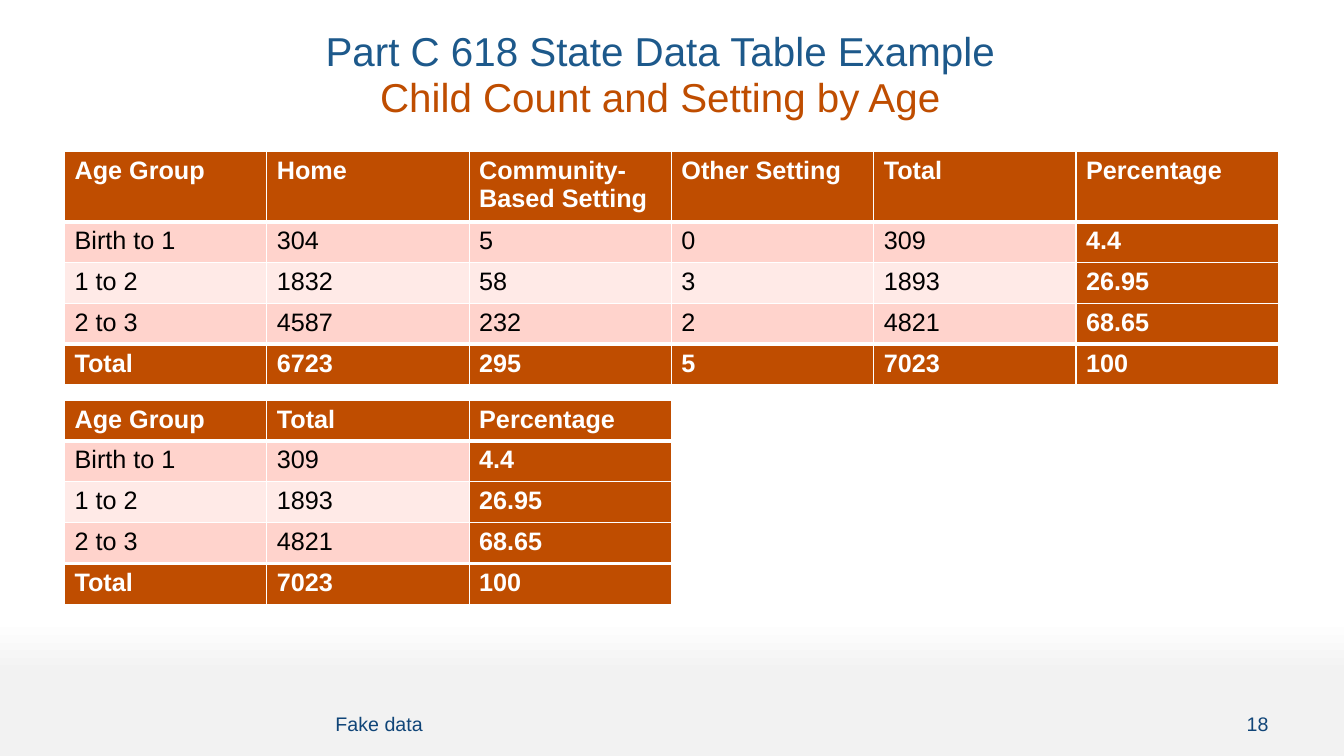
from lxml import etree
from pptx import Presentation
from pptx import util as u
from pptx.dml.color import RGBColor
from pptx.enum import text
from pptx.oxml import ns

ORANGE, BLUE, NAVY, WHITE = "BF4D00", "1D598B", "104578", "FFFFFF"
BANDS = ["FFD3CC", "FFEAE7"]


def rgb(value):
    return RGBColor.from_string(value)


class Deck:
    """Places elements on a grid of 6 columns and 30 rows."""
    font = "Arial"
    left, col, row = 0.64, 12.04 / 6, 0.25

    def __init__(self, prs):
        self.s = prs.slides.add_slide(prs.slide_layouts[6])

    def area(self, col, row, cols, rows):
        return (u.Inches(self.left + col * self.col), u.Inches(row * self.row),
                u.Inches(cols * self.col), u.Inches(rows * self.row))

    def background(self, stops):
        fill = self.s.background.fill
        fill.gradient()
        fill.gradient_angle = 270
        for stop, (position, color) in zip(fill.gradient_stops, stops):
            stop.position = position
            stop.color.rgb = rgb(color)

    def style(self, p, size, color, bold=False):
        for r in p.runs:
            r.font.name, r.font.size, r.font.bold = self.font, u.Pt(size), bold
            r.font.color.rgb = rgb(color)

    def text(self, area, lines, size, align="LEFT", anchor="MIDDLE", spacing=1.0):
        """Each line is (wording, colour, right indent in inches)."""
        tf = self.s.shapes.add_textbox(*self.area(*area)).text_frame
        tf.word_wrap = True
        tf.vertical_anchor = text.MSO_ANCHOR[anchor]
        for i, (wording, color, indent) in enumerate(lines):
            p = tf.add_paragraph() if i else tf.paragraphs[0]
            p.text = wording
            p.alignment = text.PP_ALIGN[align]
            p.line_spacing = spacing
            if indent:
                p._p.get_or_add_pPr().set("marR", str(u.Inches(indent)))
            self.style(p, size, color)

    def borders(self, cell, top, bottom):
        tcPr = cell._tc.get_or_add_tcPr()
        for side, width in zip("LRTB", (1, 1, top, bottom)):
            ln = etree.SubElement(tcPr, ns.qn(f"a:ln{side}"), w=str(u.Pt(width)))
            fill = etree.SubElement(ln, ns.qn("a:solidFill"))
            etree.SubElement(fill, ns.qn("a:srgbClr"), val=WHITE)

    def table(self, col, row, data, header_rows, body_rows):
        last_row, last_col = len(data) - 1, len(data[0]) - 1
        heights = [header_rows] + [body_rows] * last_row
        area = self.area(col, row, last_col + 1, sum(heights))
        tbl = self.s.shapes.add_table(len(data), last_col + 1, *area).table
        tbl.last_row = tbl.last_col = True
        for column in tbl.columns:
            column.width = u.Inches(self.col)
        for i, (values, height) in enumerate(zip(data, heights)):
            tbl.rows[i].height = u.Inches(height * self.row)
            for j, value in enumerate(values):
                cell = tbl.cell(i, j)
                strong = i in (0, last_row) or j == last_col
                # Heavy rules sit below the header and above the total
                self.borders(cell, 3 if i in (1, last_row) else 1,
                             3 if i in (0, last_row - 1) else 1)
                cell.fill.solid()
                cell.fill.fore_color.rgb = rgb(ORANGE if strong else BANDS[(i - 1) % 2])
                p = cell.text_frame.paragraphs[0]
                p.text = value
                self.style(p, 18, WHITE if strong else "000000", strong)


def main():
    prs = Presentation()
    prs.slide_width, prs.slide_height = u.Inches(13.33), u.Inches(7.5)
    deck = Deck(prs)
    deck.background([(0.82, WHITE), (0.89, "F2F2F2")])

    # Title
    deck.text((0, 1, 6, 4), [("Part C 618 State Data Table Example", BLUE, 0.22),
                             ("Child Count and Setting by Age", ORANGE, 0)],
              28.8, "CENTER", "TOP", 0.95)

    # Counts by setting, then the totals alone
    counts = [
        ["Age Group", "Home", "Community-Based Setting", "Other Setting", "Total", "Percentage"],
        ["Birth to 1", "304", "5", "0", "309", "4.4"],
        ["1 to 2", "1832", "58", "3", "1893", "26.95"],
        ["2 to 3", "4587", "232", "2", "4821", "68.65"],
        ["Total", "6723", "295", "5", "7023", "100"],
    ]
    totals = [[values[0], *values[-2:]] for values in counts]
    deck.table(0, 6, counts, 2.6, 1.62)
    deck.table(0, 15.88, totals, 1.62, 1.62)

    # Footer
    deck.text((1.29, 27.64, 4.04, 2.18), [("Fake data", NAVY, 0)], 14)
    deck.text((5.33, 27.64, 0.67, 2.18), [("18", NAVY, 0)], 14, "RIGHT")

    prs.save("out.pptx")


if __name__ == "__main__":
    main()
